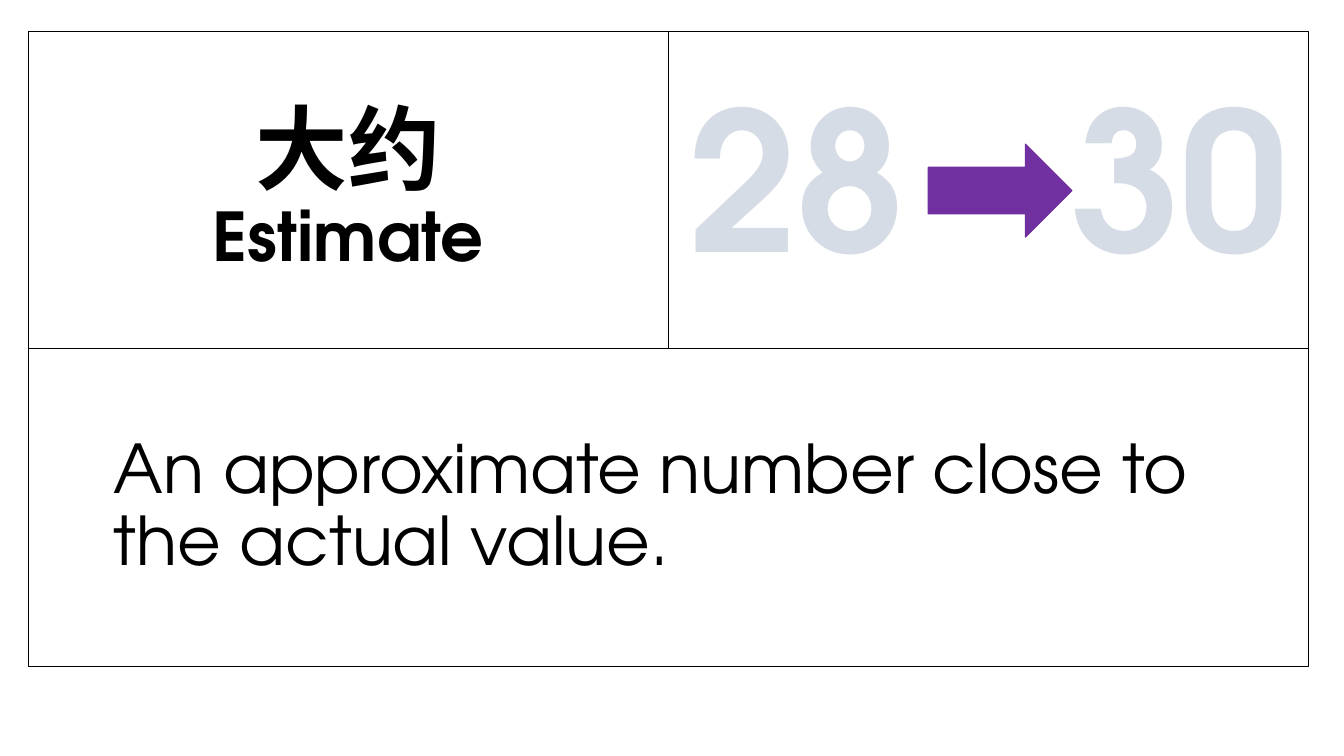
from pptx import Presentation
from pptx.dml.color import RGBColor
from pptx.enum.shapes import MSO_SHAPE
from pptx.enum.text import MSO_ANCHOR, PP_ALIGN
from pptx.util import Inches, Pt

RECTANGLE, ARROW = MSO_SHAPE.RECTANGLE, MSO_SHAPE.RIGHT_ARROW
MIDDLE = MSO_ANCHOR.MIDDLE
LEFT, CENTER = PP_ALIGN.LEFT, PP_ALIGN.CENTER

COLORS = {"ink": "000000", "number": "D6DCE5", "arrow": "7030A0"}
LATIN, CHINESE = "TeX Gyre Adventor", "Roboto"

CARD_LEFT, CARD_TOP = 0.28, 0.31
COLUMN, ROW = 6.35, 3.15


def color(name):
    return RGBColor.from_string(COLORS[name])


def grid_box(column, row, columns=1):
    return CARD_LEFT + column * COLUMN, CARD_TOP + row * ROW, columns * COLUMN, ROW


def share(box, x, y, width, height):
    """Return the part of a box given as shares of its size."""
    left, top, box_width, box_height = box
    return (left + x * box_width, top + y * box_height,
            width * box_width, height * box_height)


def add_panel(page, box):
    panel = page.shapes.add_shape(RECTANGLE, *map(Inches, box))
    panel.shadow.inherit = False
    panel.fill.background()
    panel.line.color.rgb = color("ink")
    panel.line.width = Pt(0.75)
    return panel


def write(shape, text, styles, align=CENTER, ink="ink", bold=True):
    """Fill a shape with one paragraph; styles holds a font and size per run."""
    frame = shape.text_frame
    frame.word_wrap = True
    frame.vertical_anchor = MIDDLE
    para = frame.paragraphs[0]
    para.text = text
    para.alignment = align
    para.line_spacing = 0.9
    for span, (font, size) in zip(para.runs, styles):
        span.font.name = font
        span.font.size = Pt(size)
        span.font.bold = bold
        span.font.color.rgb = color(ink)


def add_term(page, box):
    write(add_panel(page, box), "大约\vEstimate", [(CHINESE, 66), (LATIN, 48)])


def add_example(page, box):
    add_panel(page, box)
    for number, x in (("28", 0), ("30", 0.6)):
        label = page.shapes.add_textbox(*map(Inches, share(box, x, 0, 0.4, 1)))
        write(label, number, [(LATIN, 138)], ink="number")
    arrow = page.shapes.add_shape(
        ARROW, *map(Inches, share(box, 0.406, 0.356, 0.224, 0.292)))
    arrow.shadow.inherit = False
    arrow.fill.solid()
    arrow.fill.fore_color.rgb = color("arrow")
    arrow.line.color.rgb = color("arrow")
    arrow.line.width = Pt(1)


def add_definition(page, box):
    panel = add_panel(page, box)
    panel.text_frame.margin_left = Inches(0.85)
    write(panel, "An approximate number close to the actual value.",
          [(LATIN, 48)], align=LEFT, bold=False)


def main():
    deck = Presentation()
    deck.slide_width, deck.slide_height = Inches(13.33), Inches(7.5)
    page = deck.slides.add_slide(deck.slide_layouts[6])
    add_term(page, grid_box(0, 0))
    add_example(page, grid_box(1, 0))
    add_definition(page, grid_box(0, 1, columns=2))
    deck.save("out.pptx")


if __name__ == "__main__":
    main()
